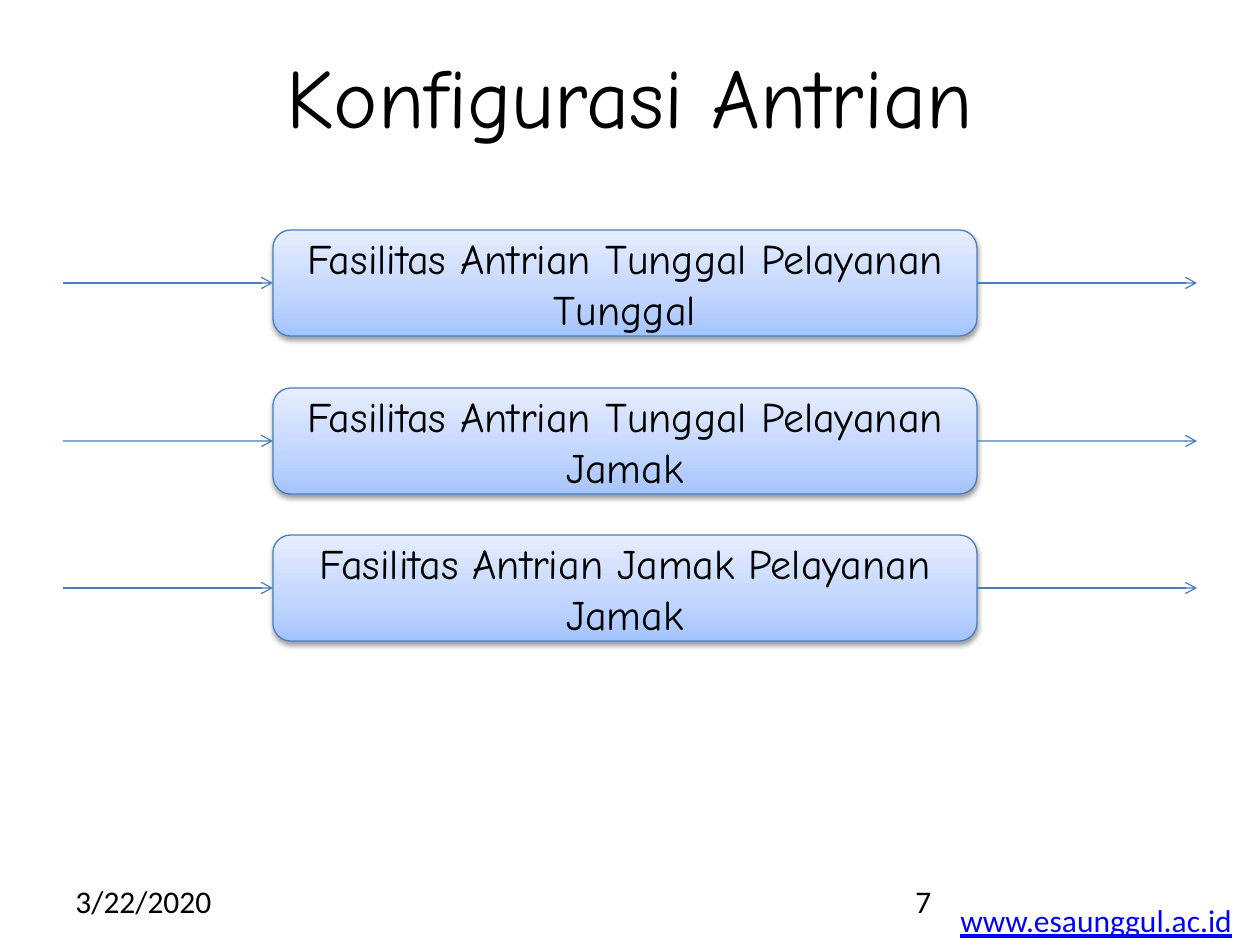
from copy import deepcopy

from pptx import Presentation
from pptx.dml.color import RGBColor
from pptx.enum.shapes import MSO_CONNECTOR, MSO_SHAPE
from pptx.enum.text import MSO_ANCHOR, PP_ALIGN
from pptx.oxml.ns import qn
from pptx.util import Emu, Pt
from lxml import etree

STRAIGHT = MSO_CONNECTOR.STRAIGHT
ROUNDED = MSO_SHAPE.ROUNDED_RECTANGLE
LEFT, CENTER = PP_ALIGN.LEFT, PP_ALIGN.CENTER
TOP, MIDDLE = MSO_ANCHOR.TOP, MSO_ANCHOR.MIDDLE
LEFT_SIDE, RIGHT_SIDE = 1, 3

BLACK = RGBColor(0x00, 0x00, 0x00)
LINK_BLUE = RGBColor(0x00, 0x00, 0xFF)
EDGE_BLUE = RGBColor(0x4B, 0x7E, 0xBC)
GRADIENT = [
    (0, RGBColor(0xA4, 0xC4, 0xFF)),
    (0.35, RGBColor(0xBF, 0xD4, 0xFF)),
    (1, RGBColor(0xE6, 0xEE, 0xFF)),
]
HEADING_FONT, FOOTER_FONT = "Comic Neue", "Calibri"

# Queue rows: top edge and label
FACILITIES = [
    (230, "Fasilitas Antrian Tunggal Pelayanan Tunggal"),
    (388, "Fasilitas Antrian Tunggal Pelayanan Jamak"),
    (535, "Fasilitas Antrian Jamak Pelayanan Jamak"),
]
BOX_LEFT, BOX_WIDTH, BOX_HEIGHT = 273, 704, 106
FLOW_START, FLOW_END = 63, 1197


def px(length):
    return Emu(round(length * 914400 / 126))


def set_text(shape, text, size, font_name, color=BLACK, align=LEFT, anchor=TOP, wrap=True):
    frame = shape.text_frame
    frame.text = text
    frame.word_wrap = wrap
    frame.vertical_anchor = anchor
    paragraph = frame.paragraphs[0]
    paragraph.alignment = align
    font = paragraph.runs[0].font
    font.size = Pt(size)
    font.name = font_name
    font.color.rgb = color
    return font


def add_label(slide, left, top, width, height, text, size, font_name, **style):
    label = slide.shapes.add_textbox(px(left), px(top), px(width), px(height))
    return set_text(label, text, size, font_name, **style)


def fill_gradient(shape):
    shape.fill.gradient()
    shape.fill.gradient_angle = 90
    stop_list = shape._element.spPr.find(".//" + qn("a:gsLst"))
    stop_list.append(deepcopy(stop_list[0]))
    for stop, (position, color) in zip(shape.fill.gradient_stops, GRADIENT):
        stop.position = position
        stop.color.rgb = color


def add_shadow(shape):
    shape.shadow.inherit = False
    effects = shape._element.spPr.find(qn("a:effectLst"))
    shadow = etree.SubElement(
        effects, qn("a:outerShdw"), blurRad=str(Pt(3.1)), dist=str(Pt(1.6)),
        dir="5400000", rotWithShape="0")
    color = etree.SubElement(shadow, qn("a:srgbClr"), val="000000")
    etree.SubElement(color, qn("a:alpha"), val="38000")


def add_facility(slide, top, text):
    box = slide.shapes.add_shape(ROUNDED, px(BOX_LEFT), px(top), px(BOX_WIDTH), px(BOX_HEIGHT))
    fill_gradient(box)
    box.line.color.rgb = EDGE_BLUE
    box.line.width = Pt(0.75)
    add_shadow(box)
    set_text(box, text, 24, HEADING_FONT, align=CENTER, anchor=MIDDLE)
    return box


def add_arrow(slide, start, end, y):
    arrow = slide.shapes.add_connector(STRAIGHT, px(start), px(y), px(end), px(y))
    arrow.line.color.rgb = EDGE_BLUE
    arrow.line.width = Pt(0.75)
    etree.SubElement(arrow.line._get_or_add_ln(), qn("a:tailEnd"), type="arrow")
    etree.SubElement(arrow._element.spPr, qn("a:effectLst"))
    return arrow


def main():
    prs = Presentation()
    prs.slide_width, prs.slide_height = px(1260), px(945)
    slide = prs.slides.add_slide(prs.slide_layouts[6])

    # Site address and title
    address = add_label(slide, 948, 895, 300, 50, "www.esaunggul.ac.id", 18, FOOTER_FONT,
                        color=LINK_BLUE, wrap=False)
    address.underline = True
    add_label(slide, 63, 38, 1134, 157, "Konfigurasi Antrian", 48, HEADING_FONT, align=CENTER)

    # Queue configurations with arrival and departure arrows
    for top, text in FACILITIES:
        facility = add_facility(slide, top, text)
        middle = top + BOX_HEIGHT // 2
        arrival = add_arrow(slide, FLOW_START, BOX_LEFT, middle)
        arrival.end_connect(facility, LEFT_SIDE)
        departure = add_arrow(slide, BOX_LEFT + BOX_WIDTH, FLOW_END, middle)
        departure.begin_connect(facility, RIGHT_SIDE)

    # Date and slide number
    for left, text in [(63, "3/22/2020"), (903, "7")]:
        add_label(slide, left, 876, 294, 50, text, 18, FOOTER_FONT)

    prs.save("out.pptx")


if __name__ == "__main__":
    main()
